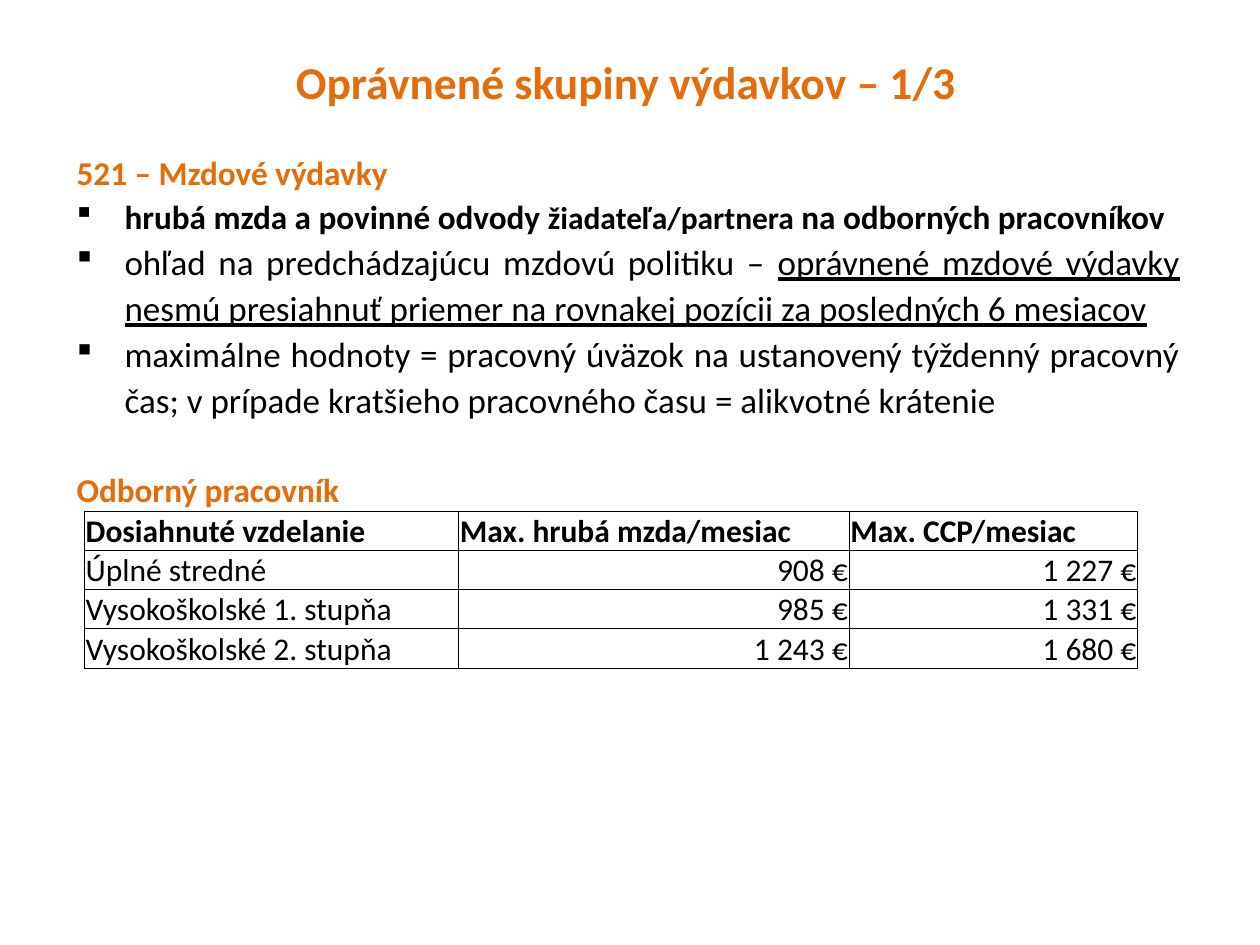
from lxml import etree
from pptx import Presentation, util as u
from pptx.dml.color import RGBColor
from pptx.enum import text as t
from pptx.oxml.ns import qn

ORANGE, BLACK = "E46C0A", "000000"
LEFT, RIGHT = t.PP_ALIGN.LEFT, t.PP_ALIGN.RIGHT
CENTER, JUST = t.PP_ALIGN.CENTER, t.PP_ALIGN.JUSTIFY


def write(para, words, size=18, color=BLACK, bold=False, line=False, align=None):
    """Add a formatted run to a paragraph."""
    run = para.add_run()
    run.text = words
    font = run.font
    font.name, font.size = "Calibri", u.Pt(size)
    font.bold, font.underline = bold, line
    font.color.rgb = RGBColor.from_string(color)
    if align is not None:
        para.alignment = align


def add(parent, tag, **attrs):
    return etree.SubElement(parent, qn(tag), attrs)


deck = Presentation()
deck.slide_width, deck.slide_height = u.Inches(10), u.Inches(7.5)
slide = deck.slides.add_slide(deck.slide_layouts[5])
edge = u.Inches(0.51)

# Title
title = slide.shapes.title
title.left, title.top = edge, u.Inches(0.29)
title.width, title.height = u.Inches(9), u.Inches(0.71)
title.text_frame.vertical_anchor = t.MSO_ANCHOR.MIDDLE
write(title.text_frame.paragraphs[0], "Oprávnené skupiny výdavkov – 1/3 ",
      size=26, color=ORANGE, bold=True, align=CENTER)

# Headings and bullets
head = dict(size=19, color=ORANGE, bold=True)
strong = dict(size=19, bold=True)
plain = dict(size=20)
lines = [
    (False, [("521 – Mzdové výdavky", head)]),
    (True, [("hrubá mzda a povinné odvody ", strong),
            ("žiadateľa/partnera ", dict(size=18, bold=True)),
            ("na odborných pracovníkov ", strong)]),
    (True, [("ohľad na predchádzajúcu mzdovú politiku – ", plain),
            ("oprávnené mzdové výdavky nesmú presiahnuť priemer na rovnakej "
             "pozícii za posledných 6 mesiacov", dict(size=20, line=True))]),
    (True, [("maximálne hodnoty = pracovný úväzok na ustanovený týždenný "
             "pracovný čas; v prípade kratšieho pracovného času = alikvotné "
             "krátenie", plain)]),
    (False, [("Odborný pracovník", head)]),
]
box = slide.shapes.add_textbox(edge, u.Inches(1.13), u.Inches(8.95), u.Inches(5.93))
frame = box.text_frame
frame.word_wrap = True
for i, (dot, runs) in enumerate(lines):
    para = frame.add_paragraph() if i else frame.paragraphs[0]
    para.line_spacing = 1.1
    if dot:
        props = para._p.get_or_add_pPr()
        props.set("marL", str(u.Inches(0.38)))
        props.set("indent", str(-u.Inches(0.38)))
        add(props, "a:buFont", typeface="Wingdings")
        add(props, "a:buChar", char="§")
    for words, look in runs:
        write(para, words, align=JUST, **look)
para.space_before = u.Pt(25.5)

# Pay table
rows = [
    ("Dosiahnuté vzdelanie", "Max. hrubá mzda/mesiac", "Max. CCP/mesiac"),
    ("Úplné stredné", "908 €", "1 227 €"),
    ("Vysokoškolské 1. stupňa", "985 €", "1 331 €"),
    ("Vysokoškolské 2. stupňa", "1 243 €", "1 680 €"),
]
widths = [2.97, 3.1, 2.29]
table = slide.shapes.add_table(len(rows), len(widths), u.Inches(0.67), u.Inches(4.06),
                               u.Inches(sum(widths)), u.Inches(1.24)).table
table.first_row = table.horz_banding = False
for col, width in zip(table.columns, widths):
    col.width = u.Inches(width)
for r, row in enumerate(rows):
    table.rows[r].height = u.Inches(0.31)
    for c, words in enumerate(row):
        cell = table.cell(r, c)
        cell.margin_left = cell.margin_right = cell.margin_top = u.Inches(0.01)
        cell.margin_bottom = 0
        cell.vertical_anchor = t.MSO_ANCHOR.BOTTOM
        for side in "LRTB":
            rule = add(cell._tc.get_or_add_tcPr(), f"a:ln{side}", w=str(u.Pt(0.5)))
            add(add(rule, "a:solidFill"), "a:srgbClr", val=BLACK)
        cell.fill.background()
        write(cell.text_frame.paragraphs[0], words, bold=r == 0,
              align=RIGHT if r and c else LEFT)

deck.save("out.pptx")
